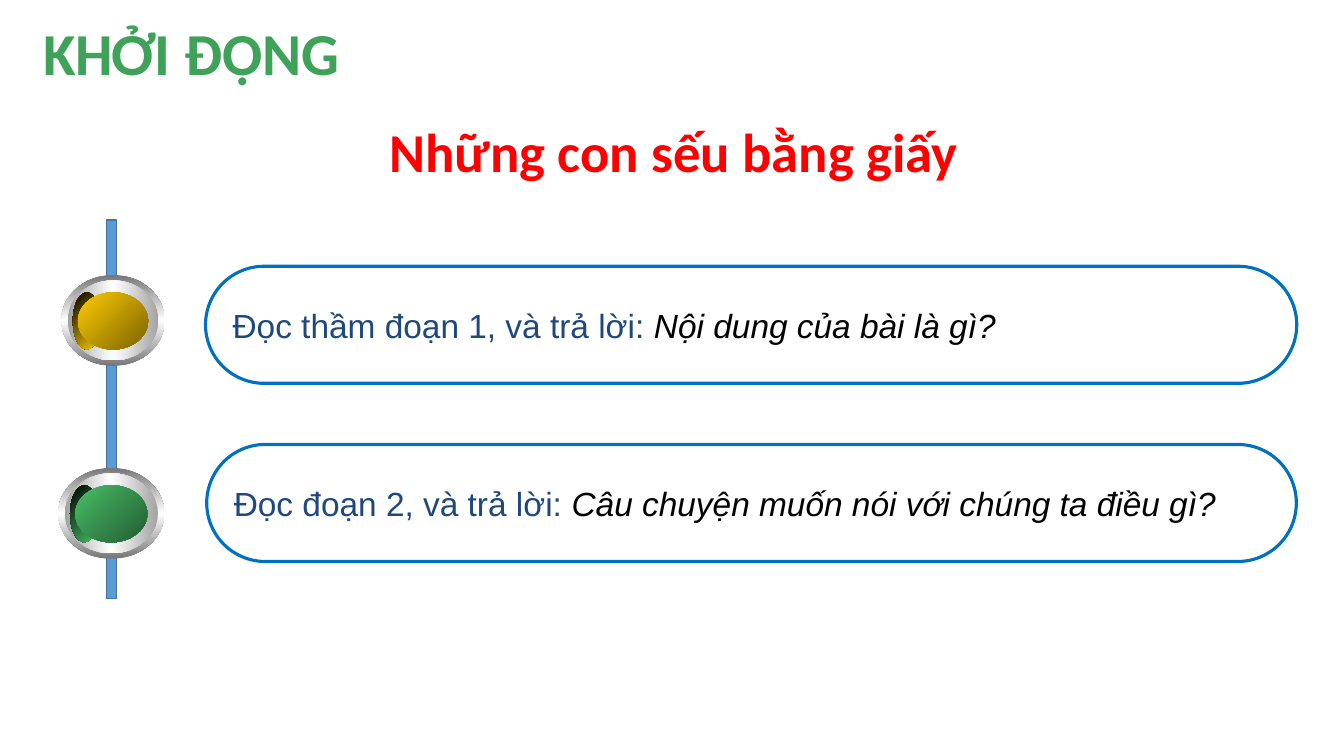
from lxml.etree import SubElement
from pptx import Presentation
from pptx.dml.color import RGBColor
from pptx.enum.shapes import MSO_SHAPE
from pptx.enum.text import MSO_ANCHOR, PP_ALIGN
from pptx.oxml.ns import qn
from pptx.util import Cm, Pt

COLORS = {
    "title": "3EA258", "lesson": "FF0000", "prompt": "1F497D", "question": "000000",
    "pill": "0070C0", "rail": "5B9BD5", "rail_edge": "43739E",
    "rim": "767676", "ring": "A2A2A2", "shine": "FFFFFF", "shade": "000000",
    "gold": "FFCC00", "dark_gold": "7C6300", "green": "48BE67", "dark_green": "235C32",
}


def color(name):
    return RGBColor.from_string(COLORS[name])


def write(para, text, font="Arial", size=23.9, shade="question", bold=False, italic=False):
    span = para.add_run()
    span.text = text
    span.font.name = font
    span.font.size = Pt(size)
    span.font.bold = bold
    span.font.italic = italic
    span.font.color.rgb = color(shade)


def place(shape, box):
    shape.left, shape.top, shape.width, shape.height = (Cm(length) for length in box)


def fill_gradient(shape, names, angle):
    shape.fill.gradient()
    shape.fill.gradient_angle = angle
    stops = shape.element.spPr.find(qn("a:gradFill")).find(qn("a:gsLst"))
    for stop in list(stops):
        stops.remove(stop)
    for index, name in enumerate(names):
        position = 100000 * index // (len(names) - 1)
        stop = SubElement(stops, qn("a:gs"), pos=str(position))
        SubElement(stop, qn("a:srgbClr"), val=COLORS[name])


def add_title(page, box):
    title = page.shapes.title
    place(title, box)
    frame = title.text_frame
    frame.word_wrap = False
    frame.vertical_anchor = MSO_ANCHOR.MIDDLE
    para = frame.paragraphs[0]
    para.alignment = PP_ALIGN.LEFT
    para.line_spacing = 0.9
    write(para, "KHỞI ĐỘNG", font="Calibri", size=42.5, shade="title", bold=True)


def add_lesson_name(page, box):
    label = page.shapes.add_textbox(*(Cm(length) for length in box))
    label.text_frame.word_wrap = True
    para = label.text_frame.paragraphs[0]
    para.alignment = PP_ALIGN.CENTER
    write(para, "Những con sếu bằng giấy", font="Calibri", size=39.1, shade="lesson", bold=True)


def add_rail(page, box):
    rail = page.shapes.add_shape(MSO_SHAPE.RECTANGLE, *(Cm(length) for length in box))
    rail.shadow.inherit = False
    rail.fill.solid()
    rail.fill.fore_color.rgb = color("rail")
    rail.line.color.rgb = color("rail_edge")
    rail.line.width = Pt(1)


def add_question(page, box, prompt, question):
    pill = page.shapes.add_shape(MSO_SHAPE.ROUNDED_RECTANGLE, *(Cm(length) for length in box))
    pill.adjustments[0] = 0.5
    pill.shadow.inherit = False
    pill.fill.background()
    pill.line.color.rgb = color("pill")
    pill.line.width = Pt(2.25)
    frame = pill.text_frame
    frame.word_wrap = True
    frame.vertical_anchor = MSO_ANCHOR.MIDDLE
    para = frame.paragraphs[0]
    para.alignment = PP_ALIGN.LEFT
    write(para, prompt, shade="prompt")
    write(para, question, italic=True)


def add_bead(page, box, bright, dark):
    left, top, width, height = box
    layers = [
        ((0, 0, 1, 1), ("rim", "shine", "rim"), 270),
        ((0.06, 0.06, 0.88, 0.88), ("ring", "shine", "ring"), 0),
        ((0.11, 0.19, 0.27, 0.63), ("shade", bright), 315),
        ((0.16, 0.19, 0.68, 0.63), (bright, dark), 315),
    ]
    bead = page.shapes.add_group_shape()
    for (x, y, across, down), names, angle in layers:
        disc = bead.shapes.add_shape(
            MSO_SHAPE.OVAL, Cm(left + x * width), Cm(top + y * height),
            Cm(across * width), Cm(down * height))
        disc.shadow.inherit = False
        disc.line.fill.background()
        fill_gradient(disc, names, angle)


def main():
    deck = Presentation()
    deck.slide_width, deck.slide_height = Cm(33.87), Cm(19.05)
    page = deck.slides.add_slide(deck.slide_layouts[5])
    add_rail(page, (2.69, 5.54, 0.25, 9.55))
    add_title(page, (0.84, 0.48, 8.05, 1.88))
    add_question(page, (5.18, 6.71, 27.5, 2.95),
                 "Đọc thầm đoạn 1, và trả lời: ", "Nội dung của bài là gì?")
    add_question(page, (5.21, 11.2, 27.46, 2.95),
                 "Đọc đoạn 2, và trả lời: ", "Câu chuyện muốn nói với chúng ta điều gì?")
    add_bead(page, (1.55, 6.93, 2.6, 2.29), "gold", "dark_gold")
    add_bead(page, (1.47, 11.79, 2.67, 2.29), "green", "dark_green")
    add_lesson_name(page, (5.94, 2.84, 22.1, 1.93))
    deck.save("out.pptx")


if __name__ == "__main__":
    main()
